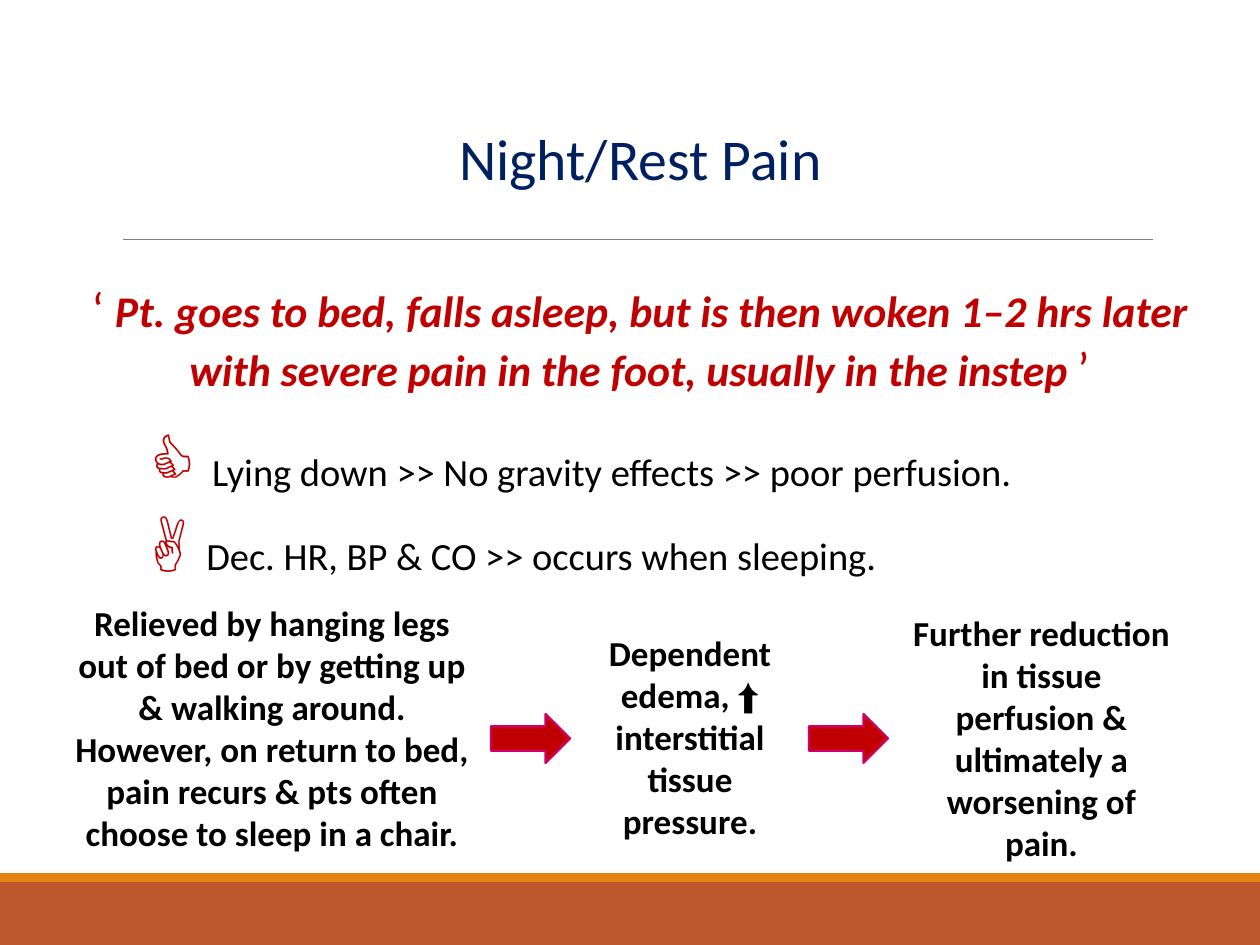
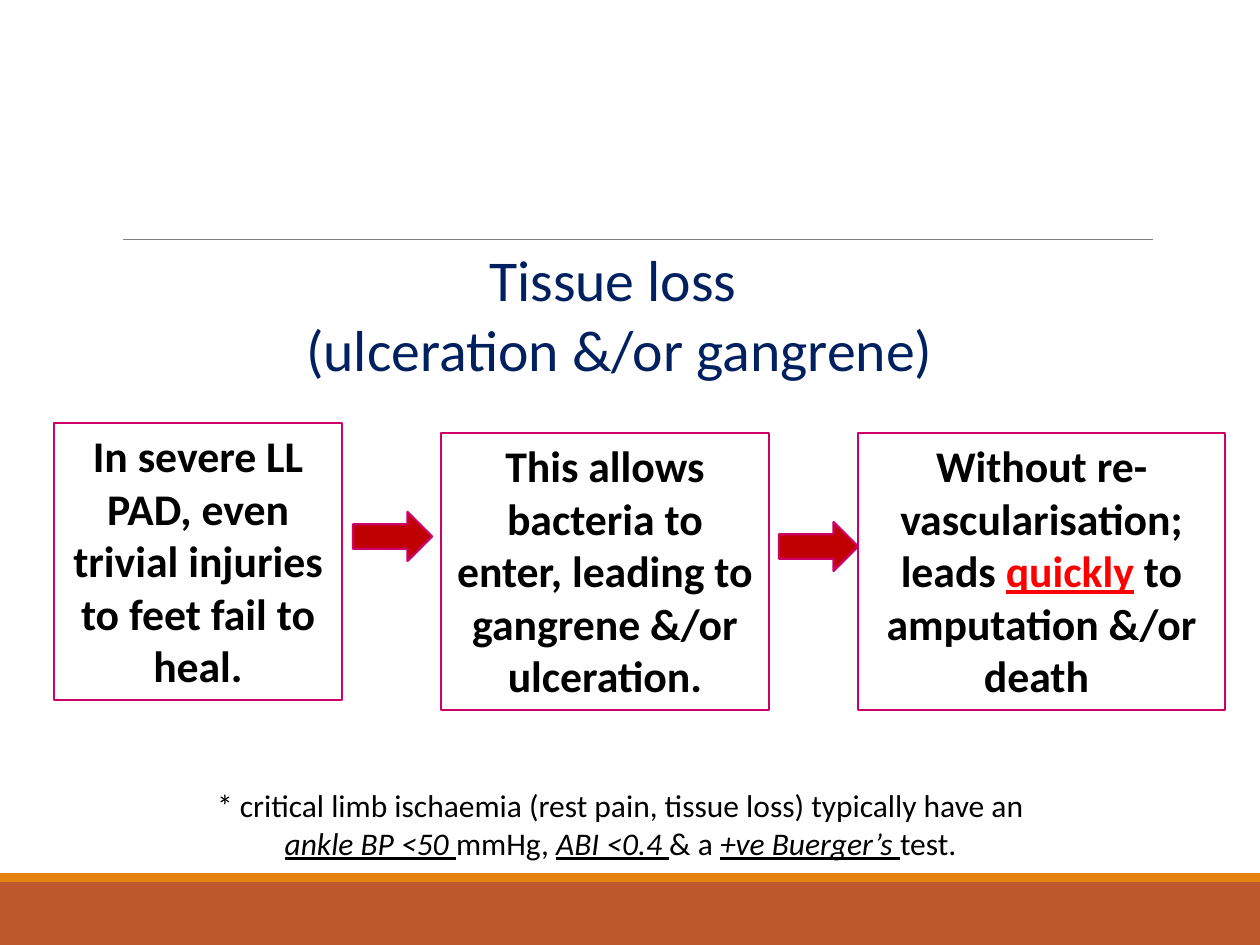
from pptx import Presentation
from pptx.dml.color import RGBColor
from pptx.enum.shapes import MSO_CONNECTOR, MSO_SHAPE
from pptx.enum.text import MSO_ANCHOR, PP_ALIGN
from pptx.oxml.ns import qn
from pptx.util import Pt
from lxml import etree

PX = 914400 / 126
FONT = "Calibri"
RUST = RGBColor(0xBD, 0x58, 0x2C)
ORANGE = RGBColor(0xE4, 0x83, 0x12)
GRAY = RGBColor(0x80, 0x80, 0x80)
NAVY = RGBColor(0x00, 0x20, 0x60)
DARK_RED = RGBColor(0xC0, 0x00, 0x00)
RED = RGBColor(0xFF, 0x00, 0x00)
PINK = RGBColor(0xCC, 0x00, 0x66)
BLACK = RGBColor(0x00, 0x00, 0x00)

TITLE = {"size": Pt(33), "color": NAVY}
QUOTE = {"size": Pt(25), "color": DARK_RED, "bold": True, "italic": True}
MARK = {"size": Pt(28), "color": DARK_RED}
HAND = {"size": Pt(40), "color": DARK_RED, "bold": True}
POINT = {"size": Pt(22), "color": BLACK}
STEP = {"size": Pt(20), "color": BLACK, "bold": True}
BOXED = {"size": Pt(25), "color": BLACK, "bold": True}
URGENT = {**BOXED, "color": RED, "underline": True}
NOTE = {"size": Pt(18), "color": BLACK}
KEY = {**NOTE, "italic": True, "underline": True}


def add_shape(s, kind, at, fill=None, line=None, width=1):
    sp = s.shapes.add_shape(kind, *[round(v * PX) for v in at])
    sp.shadow.inherit = False
    for part, color in ((sp.fill, fill), (sp.line.fill, line)):
        if color is None:
            part.background()
        else:
            part.solid()
            part.fore_color.rgb = color
    if line is not None:
        sp.line.width = Pt(width)
    return sp


def add_text(s, at, paragraphs, line=None, anchor=MSO_ANCHOR.TOP):
    if line is None:
        sp = s.shapes.add_textbox(*[round(v * PX) for v in at])
    else:
        sp = add_shape(s, MSO_SHAPE.RECTANGLE, at, line=line, width=0.75)
    tf = sp.text_frame
    tf.word_wrap = True
    tf.vertical_anchor = anchor
    for i, runs in enumerate(paragraphs):
        p = tf.paragraphs[0] if i == 0 else tf.add_paragraph()
        p.alignment = PP_ALIGN.CENTER
        for text, style in runs:
            r = p.add_run()
            r.text = text
            r.font.name = FONT
            for name, value in style.items():
                if name == "color":
                    r.font.color.rgb = value
                else:
                    setattr(r.font, name, value)
    return tf


prs = Presentation()
prs.slide_width, prs.slide_height = round(1260 * PX), round(945 * PX)

slides = []
for arrows in [((491, 714), (809, 714)), ((353, 512), (779, 522))]:
    s = prs.slides.add_slide(prs.slide_layouts[6])
    add_shape(s, MSO_SHAPE.RECTANGLE, (0, 882, 1260, 63), RUST)
    add_shape(s, MSO_SHAPE.RECTANGLE, (0, 873, 1260, 9), ORANGE)
    rule = s.shapes.add_connector(MSO_CONNECTOR.STRAIGHT, *[round(v * PX) for v in (123, 239, 1153, 239)])
    rule.line.color.rgb = GRAY
    rule.line.width = Pt(0.5)
    etree.SubElement(rule._element.spPr, qn("a:effectLst"))
    for x, y in arrows:
        add_shape(s, MSO_SHAPE.RIGHT_ARROW, (x, y, 79, 49), DARK_RED, PINK, 1.25)
    slides.append(s)
pain, loss = slides

add_text(pain, (105, 107, 1071, 100), [[("Night/Rest Pain", TITLE)]], anchor=MSO_ANCHOR.MIDDLE)
tf = add_text(pain, (74, 272, 1131, 323), [
    [("‘ ", MARK),
     ("Pt. goes to bed, falls asleep, but is then woken 1–2 hrs later with severe pain in the foot, "
      "usually in the instep ", QUOTE),
     ("’", MARK)],
    [("👍 ", HAND), ("Lying down >> No gravity effects >> poor perfusion.", POINT)],
    [("✌ ", HAND), ("Dec. HR, BP & CO >> occurs when sleeping.", POINT)],
])
for p in tf.paragraphs[1:]:
    p.level = 1
    p.alignment = PP_ALIGN.LEFT
tf.paragraphs[1].space_before = Pt(12)

for at, text in [
    ((54, 595, 436, 267), "Relieved by hanging legs out of bed or by getting up & walking around. "
                          "However, on return to bed, pain recurs & pts often choose to sleep in a chair."),
    ((581, 625, 218, 224), "Dependent edema, ⬆ interstitial tissue pressure."),
    ((898, 605, 287, 267), "Further reduction in tissue perfusion & ultimately a worsening of pain."),
]:
    add_text(pain, at, [[(text, STEP)]])

for at, runs in [
    ((54, 423, 288, 277), [("In severe LL PAD, even trivial injuries to feet fail to heal.", BOXED)]),
    ((441, 433, 328, 277), [("This allows bacteria to enter, leading to gangrene &/or ulceration.", BOXED)]),
    ((858, 433, 367, 277), [("Without re-vascularisation; leads ", BOXED), ("quickly", URGENT),
                            (" to amputation &/or death ", BOXED)]),
]:
    add_text(loss, at, [runs], line=PINK)

add_text(loss, (84, 244, 1071, 139), [[("Tissue loss ", TITLE)], [("(ulceration &/or gangrene)", TITLE)]],
         anchor=MSO_ANCHOR.MIDDLE)
add_text(loss, (194, 780, 853, 89), [[
    ("* critical limb ischaemia (rest pain, tissue loss) typically have an ", NOTE),
    ("ankle BP <50 ", KEY), ("mmHg, ", NOTE),
    ("ABI <0.4 ", KEY), ("& a ", NOTE),
    ("+ve Buerger’s ", KEY), ("test.", NOTE),
]])

prs.save("out.pptx")
